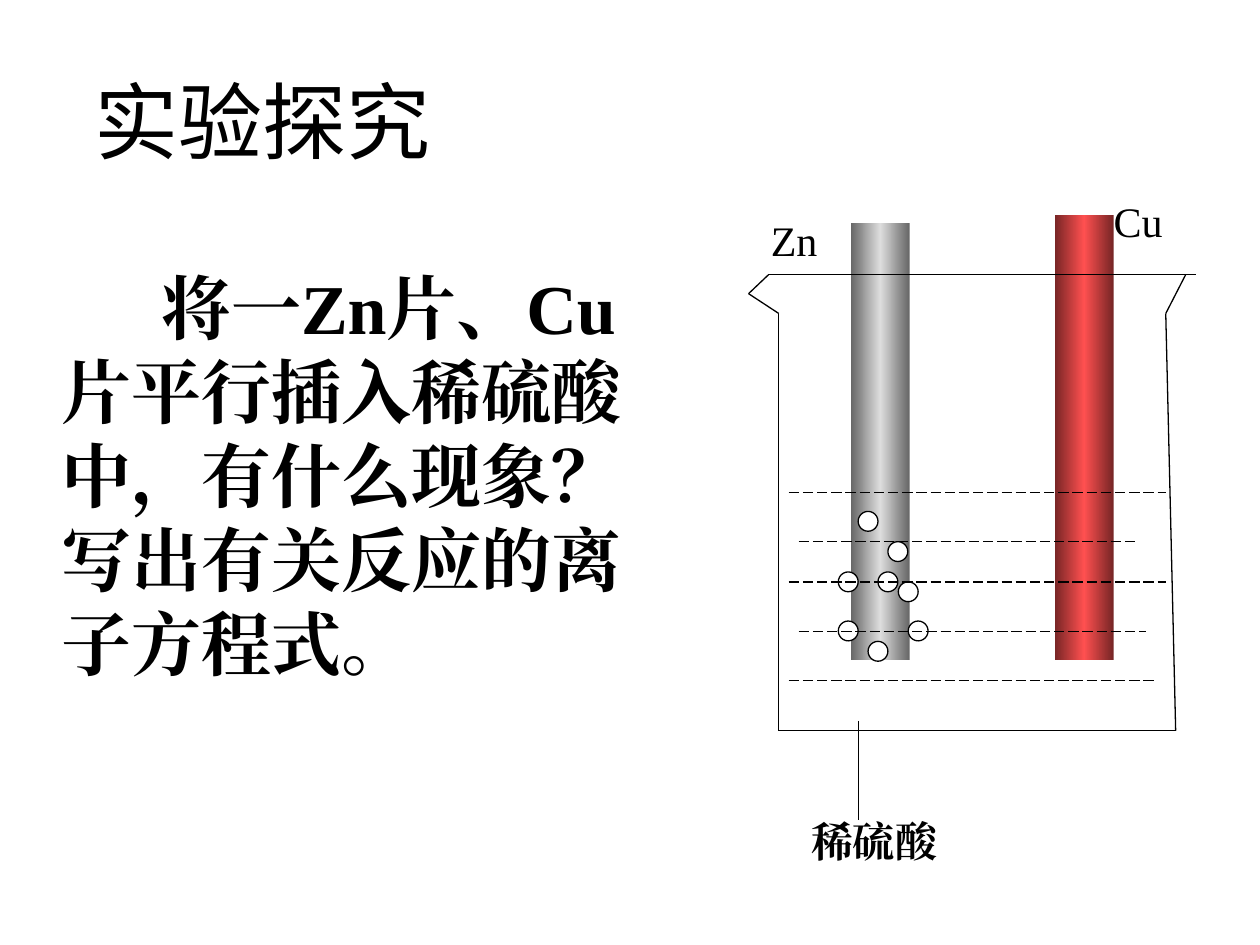
import pptx
import pptx.util
import pptx.dml.color
import pptx.enum.dml
import pptx.enum.shapes
import pptx.enum.text
import pptx.oxml.ns
import copy
from lxml import etree

Cm = pptx.util.Cm
Pt = pptx.util.Pt
RGB = pptx.dml.color.RGBColor
KIND = pptx.enum.shapes.MSO_SHAPE
BLACK = RGB(0, 0, 0)
WHITE = RGB(255, 255, 255)
ZINC = (RGB(0x66, 0x66, 0x66), RGB(0xDD, 0xDD, 0xDD))
COPPER = (RGB(0x76, 0x25, 0x25), RGB(0xFF, 0x50, 0x50))
SERIF = "Times New Roman"
SANS = "Noto Sans CJK SC"

deck = pptx.Presentation()
deck.slide_width, deck.slide_height = Cm(25.4), Cm(19.05)
slide = deck.slides.add_slide(deck.slide_layouts[6])
shapes = slide.shapes


def write(words, box, size, bold=False, font=SERIF, wrap=False):
    frame = shapes.add_textbox(*map(Cm, box)).text_frame
    frame.word_wrap = wrap
    para = frame.paragraphs[0]
    run = para.add_run()
    run.text = words
    run.font.size, run.font.bold, run.font.name = Pt(size), bold, font
    run.font.color.rgb = BLACK
    asian = etree.SubElement(run.font._element, pptx.oxml.ns.qn("a:ea"))
    asian.set("typeface", font)
    return frame, para


def draw(start, end, dash=False):
    line = shapes.add_connector(pptx.enum.shapes.MSO_CONNECTOR.STRAIGHT,
                                *map(Cm, start + end))
    line.line.color.rgb = BLACK
    line.line.width = Pt(0.75)
    if dash:
        line.line.dash_style = pptx.enum.dml.MSO_LINE.LONG_DASH
    etree.SubElement(line._element.spPr, pptx.oxml.ns.qn("a:effectLst"))


# Acid label and its pointer
write("稀硫酸", (16.1, 16.31, 3.2, 1.27), 24, bold=True, wrap=True)
draw((17.3, 14.53), (17.3, 16.54))

# Metal rods, shaded from edge to middle to edge
base = 13.31
for left, top, (edge, core) in ((17.15, 4.5, ZINC), (21.26, 4.34, COPPER)):
    rod = shapes.add_shape(KIND.RECTANGLE, Cm(left), Cm(top),
                           Cm(1.19), Cm(base - top))
    rod.shadow.inherit = False
    rod.line.fill.background()
    rod.fill.gradient()
    rod.fill.gradient_angle = 0
    first = rod.fill.gradient_stops[0]._gs
    first.addnext(copy.deepcopy(first))
    for stop, place, shade in zip(rod.fill.gradient_stops,
                                  (0, 0.5, 1), (edge, core, edge)):
        stop.position = place
        stop.color.rgb = shade
write("Zn", (15.29, 4.19, 1.45, 1.27), 24)
write("Cu", (22.2, 3.81, 1.5, 1.27), 24)

# Gas bubbles
for left, top in ((16.9, 11.53), (16.9, 12.52), (17.5, 12.93), (18.31, 12.52),
                  (18.11, 11.73), (17.7, 11.53), (17.3, 10.31), (17.9, 10.92)):
    gas = shapes.add_shape(KIND.OVAL, Cm(left), Cm(top), Cm(0.4), Cm(0.4))
    gas.shadow.inherit = False
    gas.fill.solid()
    gas.fill.fore_color.rgb = WHITE
    gas.line.color.rgb = BLACK
    gas.line.width = Pt(0.75)

# Question, with its first line indented
frame, para = write("将一Zn片、Cu片平行插入稀硫酸中，有什么现象？写出有关反应的离子方程式。",
                    (1, 5.21, 12.5, 8.71), 40, bold=True, wrap=True)
para.line_spacing = Pt(48)
props = para._p.get_or_add_pPr()
props.set("marL", "0")
props.set("indent", str(Cm(2)))

# Title
frame, para = write("实验探究", (1.9, 1.4, 6.78, 1.7), 48, font=SANS)
frame.margin_left = frame.margin_right = 0
frame.margin_top = frame.margin_bottom = 0
para.alignment = pptx.enum.text.PP_ALIGN.CENTER

# Beaker: outline from rim to rim, then the top edge
glass = ((15.49, 5.54), (15.09, 5.92), (15.7, 6.32), (15.7, 14.73),
         (23.7, 14.73), (23.5, 6.32), (23.9, 5.54))
for start, end in zip(glass, glass[1:]):
    draw(start, end)
draw(glass[0], (24.1, 5.54))

# Liquid
for left, right, top in ((15.9, 23.5, 9.93), (16.1, 22.91, 10.92),
                         (15.9, 23.5, 11.73), (16.1, 23.11, 12.73),
                         (15.9, 23.29, 13.72)):
    draw((left, top), (right, top), dash=True)

deck.save("out.pptx")
